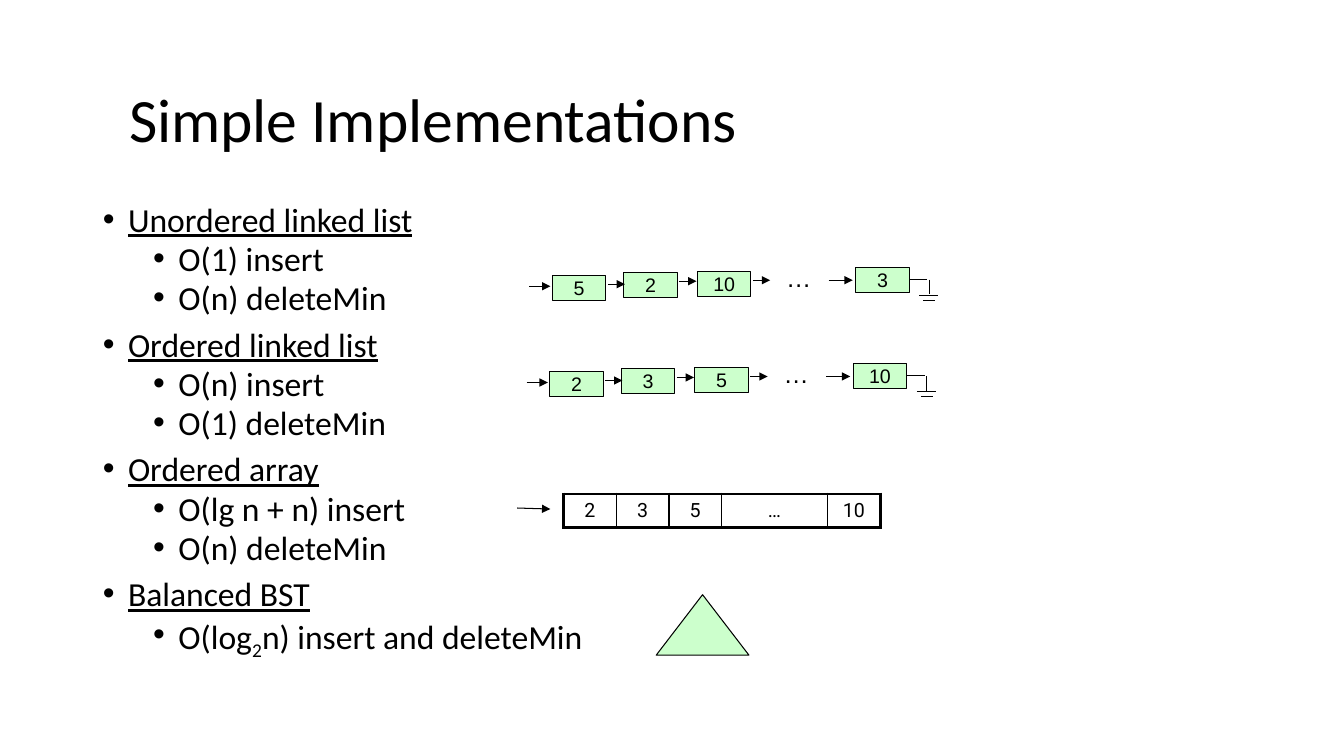
from dataclasses import dataclass
from itertools import zip_longest

from pptx import Presentation
from pptx.dml.color import RGBColor
from pptx.enum.shapes import MSO_CONNECTOR as Connector, MSO_SHAPE as Shape
from pptx.enum.text import MSO_ANCHOR as Anchor, MSO_AUTO_SIZE as AutoSize, PP_ALIGN as Align
from pptx.oxml import parse_xml
from pptx.oxml.ns import nsdecls
from pptx.oxml.xmlchemy import OxmlElement
from pptx.util import Inches, Pt


@dataclass(frozen=True)
class Theme:
    ink: RGBColor = RGBColor(0, 0, 0)
    node: RGBColor = RGBColor(0xCC, 0xFF, 0xCC)
    main_font: str = "Calibri"
    node_font: str = "Arial"
    array_font: str = "Roboto"
    title_size: float = 44
    list_size: float = 24
    dots_size: float = 18
    node_size: float = 14
    thin: float = 0.75
    inner: float = 1
    outer: float = 2.25


COLUMNS, ROWS = 133.33, 75  # a grid of tenth-inch cells
NODE_WIDTH, NODE_HEIGHT = 5.3, 2.5
NODE_PLACES = [(54.8, 27.3), (61.9, 27), (69.2, 26.9), (84.9, 26.5)]
LINK_ARROWS = [(52.5, 54.6, 28.4), (60.3, 62, 28.2), (67.4, 69.1, 27.9),
               (74.7, 76.4, 27.8), (82.2, 84.6, 27.8)]
GROUND_BARS = [(91.2, 93.1, 29.3), (91.6, 92.8, 29.8)]
LINKED_LISTS = [(["5", "2", "10", "3"], 0, 0), (["2", "3", "5", "10"], -0.25, 9.55)]
ARRAY_CELLS = {"2": 5.23, "3": 5.23, "5": 5.23, "…": 10.5, "10": 5.23}
IMPLEMENTATIONS = {
    "Unordered linked list": [["O(1) insert"], ["O(n) deleteMin"]],
    "Ordered linked list": [["O(n) insert"], ["O(1) deleteMin"]],
    "Ordered array": [["O(lg n + n) insert"], ["O(n) deleteMin"]],
    "Balanced BST": [["O(log", "2", "n) insert and deleteMin"]],
}


def cells(*counts):
    return [Inches(count / 10) for count in counts]


def apply_format(target, values):
    for name, value in values.items():
        setattr(target, name, value)


class SlideBuilder:
    def __init__(self, slide, theme):
        self.slide, self.theme = slide, theme
        self.end_group()

    def start_group(self, dx, dy):
        """Send the next shapes to a new group, shifted by dx columns and dy rows."""
        self.shapes = self.slide.shapes.add_group_shape().shapes
        self.dx, self.dy = dx, dy

    def end_group(self):
        self.shapes, self.dx, self.dy = self.slide.shapes, 0, 0

    def place(self, x, y):
        return cells(x + self.dx, y + self.dy)

    def add_words(self, paragraph, text, font, size, **formats):
        run = paragraph.add_run()
        run.text = text
        apply_format(run.font, {"name": font, "size": Pt(size), **formats})
        run.font.color.rgb = self.theme.ink
        return run

    def outline(self, line):
        line.color.rgb = self.theme.ink
        line.width = Pt(self.theme.thin)

    def fill_placeholder(self, holder, x, y, width, height, anchor):
        left, top, wide, high = cells(x, y, width, height)
        apply_format(holder, {"left": left, "top": top, "width": wide, "height": high})
        apply_format(holder.text_frame, {"vertical_anchor": anchor, "word_wrap": True,
                                         "auto_size": AutoSize.NONE})
        return holder.text_frame

    def title(self, text):
        frame = self.fill_placeholder(self.slide.shapes.title, 11.8, 4.8, 108, 14.8, Anchor.MIDDLE)
        heading = frame.paragraphs[0]
        apply_format(heading, {"alignment": Align.LEFT, "line_spacing": 0.9})
        self.add_words(heading, text, self.theme.main_font, self.theme.title_size)

    def bullet(self, paragraph, level):
        apply_format(paragraph, {"level": level, "line_spacing": 0.8, "alignment": Align.LEFT,
                                 "space_before": Pt(5 if level else 10)})
        props = paragraph._p.get_or_add_pPr()
        props.set("marL", str(Inches(0.75 if level else 0.25)))
        props.set("indent", str(Inches(-0.25)))
        props.append(parse_xml(f'<a:buFont {nsdecls("a")} typeface="Arial"/>'))
        props.append(parse_xml(f'<a:buChar {nsdecls("a")} char="•"/>'))

    def outline_list(self, topics):
        frame = self.fill_placeholder(self.slide.placeholders[1], 9.2, 20, 115, 47.6, Anchor.TOP)
        entries = [entry for topic, costs in topics.items()
                   for entry in [(0, [topic])] + [(1, cost) for cost in costs]]
        for paragraph, (level, parts) in zip_longest(frame.paragraphs, entries):
            paragraph = paragraph or frame.add_paragraph()
            self.bullet(paragraph, level)
            for index, part in enumerate(parts):
                run = self.add_words(paragraph, part, self.theme.main_font, self.theme.list_size,
                                     underline=level == 0)
                if index == 1:
                    run._r.get_or_add_rPr().set("baseline", "-25000")

    def figure(self, kind, x, y, width, height, text=""):
        figure = self.shapes.add_shape(kind, *self.place(x, y), *cells(width, height))
        figure.shadow.inherit = False
        figure.fill.solid()
        figure.fill.fore_color.rgb = self.theme.node
        self.outline(figure.line)
        if text:
            apply_format(figure.text_frame, {"word_wrap": False, "vertical_anchor": Anchor.MIDDLE})
            label = figure.text_frame.paragraphs[0]
            label.alignment = Align.CENTER
            self.add_words(label, text, self.theme.node_font, self.theme.node_size)
        return figure

    def line(self, x1, y1, x2, y2, arrow=False, source=None):
        """Draw a line, joined to the right side of source if one is given."""
        line = self.shapes.add_connector(Connector.STRAIGHT, *self.place(x1, y1), *self.place(x2, y2))
        self.outline(line.line)
        props = line._element.spPr
        if arrow:
            head = OxmlElement("a:tailEnd")
            head.set("type", "triangle")
            props.get_or_add_ln().append(head)
        props.append(OxmlElement("a:effectLst"))
        if source is not None:
            line.begin_connect(source, 3)

    def dots(self, x, y):
        box = self.shapes.add_textbox(*self.place(x, y), *cells(4.5, 4))
        apply_format(box.text_frame, {"word_wrap": False, "auto_size": AutoSize.SHAPE_TO_FIT_TEXT})
        self.add_words(box.text_frame.paragraphs[0], "…", self.theme.node_font, self.theme.dots_size)

    def linked_list(self, keys, dx, dy):
        self.start_group(dx, dy)
        for key, (x, y) in zip(keys, NODE_PLACES):
            last_node = self.figure(Shape.RECTANGLE, x, y, NODE_WIDTH, NODE_HEIGHT, key)
        for start, end, level in LINK_ARROWS:
            self.line(start, level, end, level, arrow=True)
        self.dots(77, 25.5)
        middle = y + NODE_HEIGHT / 2
        self.line(x + NODE_WIDTH, middle, 92, middle, source=last_node)
        self.line(92.2, middle, 92.2, 29.2)
        for start, end, level in GROUND_BARS:
            self.line(start, level, end, level)
        self.end_group()

    def border(self, cell, widths):
        props = cell._tc.get_or_add_tcPr()
        for index, (side, width) in enumerate(widths.items()):
            props.insert(index, parse_xml(
                f'<a:ln{side} {nsdecls("a")} w="{Pt(width)}"><a:solidFill>'
                f'<a:srgbClr val="{self.theme.ink}"/></a:solidFill></a:ln{side}>'))

    def array(self, x, y, height, widths):
        table = self.shapes.add_table(1, len(widths), *self.place(x, y),
                                      *cells(sum(widths.values()), height)).table
        apply_format(table, {"first_row": False, "horz_banding": False})
        inner, outer, last = self.theme.inner, self.theme.outer, len(widths) - 1
        for index, (key, width) in enumerate(widths.items()):
            table.columns[index].width, = cells(width)
            cell = table.cell(0, index)
            cell.fill.background()
            self.border(cell, {"L": inner if index else outer,
                               "R": inner if index < last else outer,
                               "T": outer, "B": outer})
            entry = cell.text_frame.paragraphs[0]
            entry.alignment = Align.CENTER
            self.add_words(entry, key, self.theme.array_font, self.theme.node_size)


def main():
    deck = Presentation()
    deck.slide_width, deck.slide_height = cells(COLUMNS, ROWS)
    builder = SlideBuilder(deck.slides.add_slide(deck.slide_layouts[1]), Theme())
    builder.title("Simple Implementations")
    builder.outline_list(IMPLEMENTATIONS)
    for keys, dx, dy in LINKED_LISTS:
        builder.linked_list(keys, dx, dy)
    builder.array(55.9, 49, 3.3, ARRAY_CELLS)
    builder.line(51.3, 50.4, 54.6, 50.5, arrow=True)
    builder.figure(Shape.ISOSCELES_TRIANGLE, 65.1, 59, 9.2, 6)
    deck.save("out.pptx")


if __name__ == "__main__":
    main()
